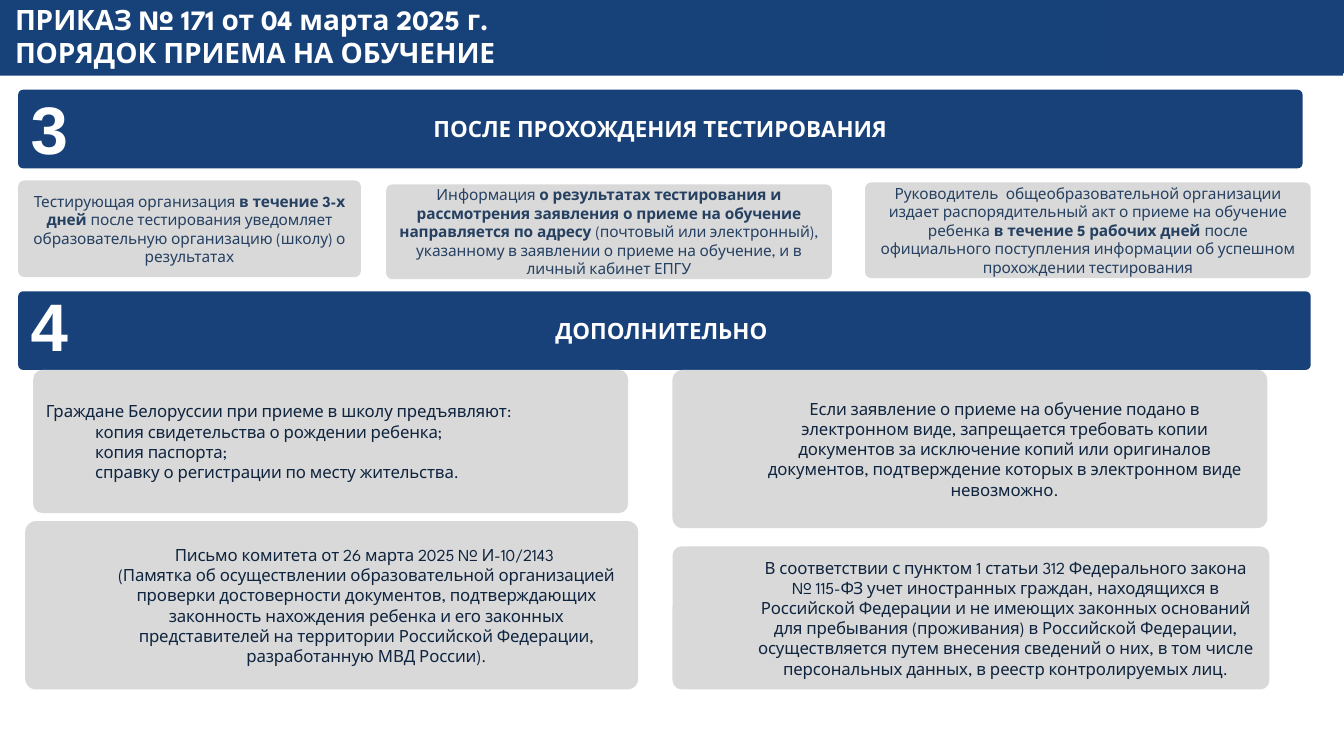
import pptx
import pptx.util
import pptx.dml.color
import pptx.enum.shapes
import pptx.enum.text

Inches = pptx.util.Inches
RGBColor = pptx.dml.color.RGBColor
SHAPE = pptx.enum.shapes.MSO_SHAPE
ALIGN = pptx.enum.text.PP_ALIGN
ANCHOR = pptx.enum.text.MSO_ANCHOR

NAVY = RGBColor(0x18, 0x41, 0x79)
HEADER_NAVY = RGBColor(0x17, 0x41, 0x79)
GRAY = RGBColor(0xD9, 0xD9, 0xD9)
STEEL = RGBColor(0x25, 0x40, 0x61)
INK = RGBColor(0x0F, 0x24, 0x3E)
WHITE = RGBColor(0xFF, 0xFF, 0xFF)

# Content: a paragraph is a list of (text, bold) runs
TITLE = [
    [("ПРИКАЗ № 171 от 04 марта 2025 г.\nПОРЯДОК ПРИЕМА НА ОБУЧЕНИЕ", True)],
]
HEADER_BANDS = [
    ((0, 0, 13.32, 0.75), HEADER_NAVY),
    ((10.92, 0, 2.42, 0.73), NAVY),
]
SECTIONS = [
    ("3", "ПОСЛЕ ПРОХОЖДЕНИЯ ТЕСТИРОВАНИЯ", (0.18, 0.89, 12.74, 0.78), 0.82),
    ("4", "ДОПОЛНИТЕЛЬНО ", (0.18, 2.89, 12.82, 0.78), 2.77),
]
STEPS = [
    ((0.18, 1.79, 3.4, 0.96), [
        ("Тестирующая организация ", False),
        ("в течение 3-х дней ", True),
        ("после тестирования уведомляет образовательную организацию "
         "(школу) о результатах", False)]),
    ((3.83, 1.83, 4.42, 0.94), [
        ("Информация ", False),
        ("о результатах тестирования и рассмотрения заявления о приеме "
         "на обучение направляется по адресу ", True),
        ("(почтовый или электронный), указанному в заявлении о приеме "
         "на обучение, и в личный кабинет ЕПГУ", False)]),
    ((8.58, 1.81, 4.42, 0.95), [
        ("Руководитель  общеобразовательной организации издает "
         "распорядительный акт о приеме на обучение ребенка ", False),
        ("в течение 5 рабочих дней ", True),
        ("после официального поступления информации об успешном "
         "прохождении тестирования", False)]),
]
BELARUS_BOX = (0.33, 3.67, 5.9, 1.42)
BELARUS_INTRO = "Граждане Белоруссии при приеме в школу предъявляют:"
BELARUS_DOCUMENTS = [
    "копия свидетельства о рождении ребенка;",
    "копия паспорта;",
    "справку о регистрации по месту жительства.",
]
NOTES = [
    ((6.67, 3.67, 5.9, 1.57),
     "Если заявление о приеме на обучение подано в электронном виде, "
     "запрещается требовать копии документов за исключение копий или "
     "оригиналов документов, подтверждение которых в электронном виде "
     "невозможно."),
    ((0.25, 5.17, 6.08, 1.67),
     "Письмо комитета от 26 марта 2025 № И-10/2143 \n"
     "(Памятка об осуществлении образовательной организацией проверки "
     "достоверности документов, подтверждающих законность нахождения "
     "ребенка и его законных представителей на территории Российской "
     "Федерации, разработанную МВД России)."),
    ((6.67, 5.42, 5.92, 1.42),
     "В соответствии с пунктом 1 статьи 312 Федерального закона № 115-ФЗ "
     "учет иностранных граждан, находящихся в Российской Федерации и не "
     "имеющих законных оснований для пребывания (проживания) в Российской "
     "Федерации, осуществляется путем внесения сведений о них, в том числе "
     "персональных данных, в реестр контролируемых лиц."),
]

# Text formats
TITLE_FORMAT = {"size": 20, "color": WHITE, "spacing": -10}
SECTION_FORMAT = {"size": 16, "color": WHITE}
NUMBER_FORMAT = {"size": 48, "color": WHITE, "name": "Arial"}
STEP_FORMAT = {"size": 11, "color": STEEL, "spacing": -10}
NOTE_FORMAT = {"size": 12, "color": INK, "spacing": -10}


def add_run(paragraph, text, bold, style):
    run = paragraph.add_run()
    run.text = text
    font_values = {
        "name": style.get("name", "League Spartan"),
        "size": pptx.util.Pt(style["size"]),
        "bold": bold,
    }
    for attribute, value in font_values.items():
        setattr(run.font, attribute, value)
    run.font.color.rgb = style["color"]
    if "spacing" in style:
        run.font._element.set("spc", str(style["spacing"]))


def fill_text(shape, paragraphs, style, align=ALIGN.CENTER, margin=0, indents=()):
    frame = shape.text_frame
    frame.word_wrap = True
    for index, runs in enumerate(paragraphs):
        paragraph = frame.add_paragraph() if index else frame.paragraphs[0]
        paragraph.alignment = align
        properties = paragraph._p.get_or_add_pPr()
        properties.set("marL", str(Inches(margin)))
        properties.set("indent", str(Inches(indents[index] if indents else 0)))
        for text, bold in runs:
            for line_index, line in enumerate(text.split("\n")):
                if line_index:
                    paragraph.add_line_break()
                add_run(paragraph, line, bold, style)


def add_block(slide, box, color, kind=SHAPE.ROUNDED_RECTANGLE):
    shape = slide.shapes.add_shape(kind, *map(Inches, box))
    shape.shadow.inherit = False
    shape.fill.solid()
    shape.fill.fore_color.rgb = color
    shape.line.fill.background()
    if kind == SHAPE.ROUNDED_RECTANGLE:
        shape.adjustments[0] = 0.064
    shape.text_frame.vertical_anchor = ANCHOR.MIDDLE
    return shape


def main():
    presentation = pptx.Presentation()
    presentation.slide_width = Inches(13.33)
    presentation.slide_height = Inches(7.5)
    slide = presentation.slides.add_slide(presentation.slide_layouts[6])

    # Header
    for box, color in HEADER_BANDS:
        add_block(slide, box, color, SHAPE.RECTANGLE)
    title = slide.shapes.add_textbox(*map(Inches, (0.14, 0, 7.94, 0.69)))
    margins = {"margin_left": 0, "margin_top": Inches(0.02),
               "margin_right": 0, "margin_bottom": 0}
    for attribute, value in margins.items():
        setattr(title.text_frame, attribute, value)
    fill_text(title, TITLE, TITLE_FORMAT, ALIGN.LEFT, margin=0.01)

    # Numbered section bars
    for number, heading, box, number_top in SECTIONS:
        fill_text(add_block(slide, box, NAVY), [[(heading, True)]], SECTION_FORMAT)
        number_box = slide.shapes.add_textbox(
            *map(Inches, (0.19, number_top, 0.6, 0.91)))
        fill_text(number_box, [[(number, True)]], NUMBER_FORMAT)

    # Steps after testing
    for box, runs in STEPS:
        fill_text(add_block(slide, box, GRAY), [runs], STEP_FORMAT)

    # Additional notes
    lines = [BELARUS_INTRO] + BELARUS_DOCUMENTS
    fill_text(add_block(slide, BELARUS_BOX, GRAY),
              [[(line, False)] for line in lines], NOTE_FORMAT, ALIGN.JUSTIFY,
              indents=[0] + [0.49] * len(BELARUS_DOCUMENTS))
    for box, text in NOTES:
        fill_text(add_block(slide, box, GRAY), [[(text, False)]],
                  NOTE_FORMAT, margin=0.69)

    presentation.save("out.pptx")


if __name__ == "__main__":
    main()
